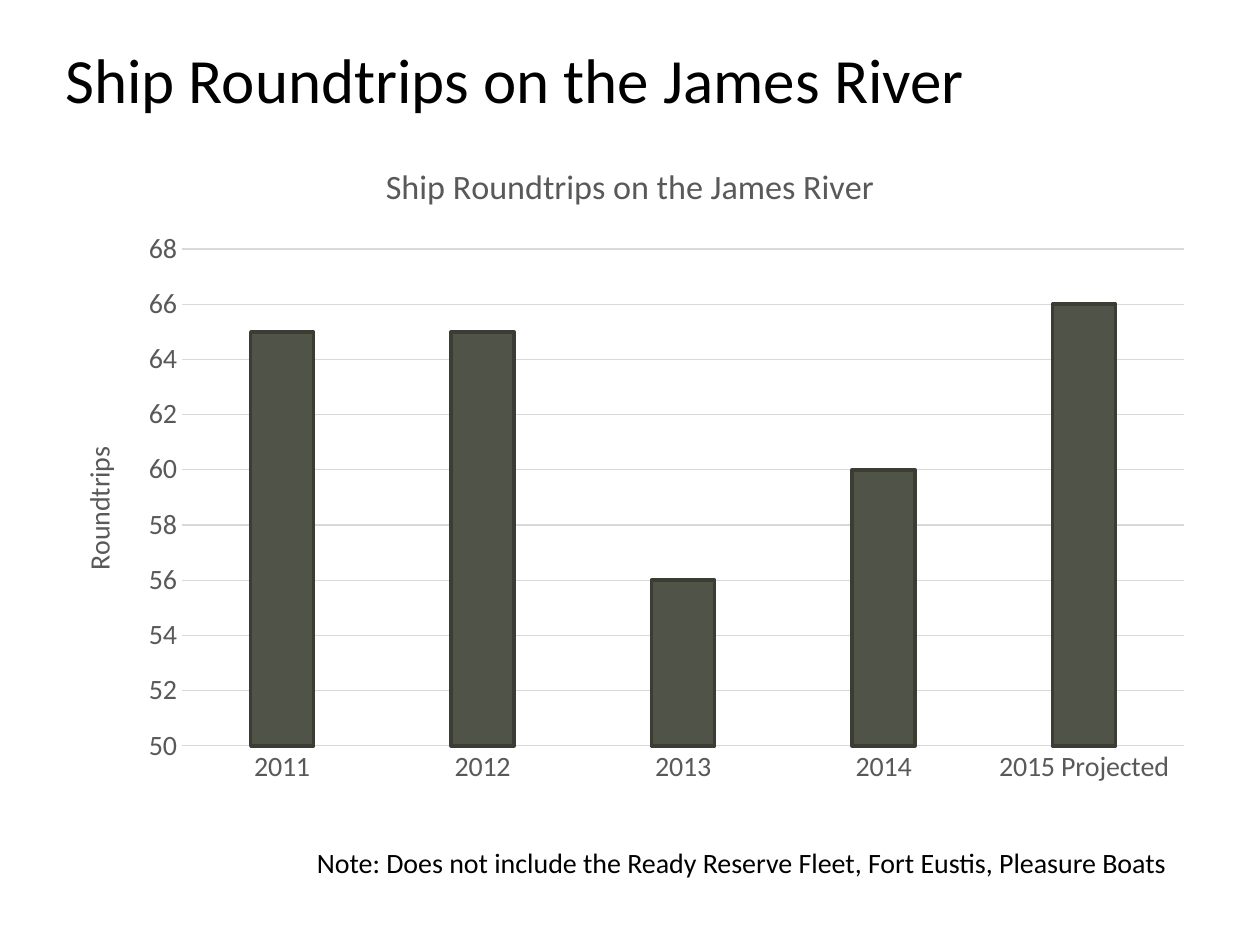
from dataclasses import dataclass

from pptx import Presentation
from pptx.chart.data import CategoryChartData
from pptx.dml.color import RGBColor
from pptx.enum.chart import XL_CHART_TYPE, XL_TICK_MARK
from pptx.enum.text import MSO_ANCHOR, PP_ALIGN
from pptx.util import Cm, Pt

COLUMN = XL_CHART_TYPE.COLUMN_CLUSTERED
NO_TICK = XL_TICK_MARK.NONE
TOP = MSO_ANCHOR.TOP
LEFT = PP_ALIGN.LEFT


@dataclass(frozen=True)
class Theme:
    face: str = "Calibri"
    ink: str = "000000"
    gray: str = "595959"
    grid: str = "D9D9D9"
    bar: str = "505348"
    edge: str = "3B3D35"
    head: float = 36
    chart: float = 19.5
    body: float = 16


theme = Theme()


def style(font, size, color):
    font.name = theme.face
    font.size = Pt(size)
    font.bold = False
    font.color.rgb = RGBColor.from_string(color)


def write(frame, text, size, color):
    """Put one styled run in the first paragraph."""
    run = frame.paragraphs[0].add_run()
    run.text = text
    style(run.font, size, color)


deck = Presentation()
deck.slide_width, deck.slide_height = Cm(25.4), Cm(19.05)
slide = deck.slides.add_slide(deck.slide_layouts[5])

# Title
title = slide.shapes.title
title.left, title.top = Cm(1.06), Cm(0.69)
title.width, title.height = Cm(23.28), Cm(1.48)
title.text_frame.vertical_anchor = TOP
title.text_frame.paragraphs[0].alignment = LEFT
write(title.text_frame, "Ship Roundtrips on the James River", theme.head, theme.ink)

# Chart
data = CategoryChartData()
data.categories = ["2011", "2012", "2013", "2014", "2015 Projected"]
data.add_series("Series 1", (65, 65, 56, 60, 66))
chart = slide.shapes.add_chart(
    COLUMN, Cm(1.06), Cm(2.75), Cm(23.28), Cm(13.34), data
).chart
style(chart.font, theme.body, theme.ink)
chart.has_legend = False
chart.has_title = True
write(chart.chart_title.text_frame, "Ship Roundtrips on the James River",
      theme.chart, theme.gray)

plot = chart.plots[0]
plot.gap_width, plot.overlap = 219, -27
plot.vary_by_categories = False
bars = plot.series[0].format
bars.fill.solid()
bars.fill.fore_color.rgb = RGBColor.from_string(theme.bar)
bars.line.color.rgb = RGBColor.from_string(theme.edge)
bars.line.width = Pt(2)

years, trips = chart.category_axis, chart.value_axis
for axis in (years, trips):
    axis.major_tick_mark = axis.minor_tick_mark = NO_TICK
    style(axis.tick_labels.font, theme.body, theme.gray)
trips.minimum_scale, trips.maximum_scale, trips.major_unit = 50, 68, 2
trips.has_major_gridlines = True
for line in (years.format.line, trips.major_gridlines.format.line):
    line.color.rgb = RGBColor.from_string(theme.grid)
    line.width = Pt(0.75)
trips.format.line.fill.background()
trips.has_title = True
write(trips.axis_title.text_frame, "Roundtrips", theme.body, theme.gray)

# Note
note = slide.shapes.add_textbox(Cm(6.14), Cm(16.93), Cm(17.78), Cm(0.85)).text_frame
note.word_wrap = True
write(note, "Note: Does not include the Ready Reserve Fleet, Fort Eustis, Pleasure Boats",
      theme.body, theme.ink)

deck.save("out.pptx")
